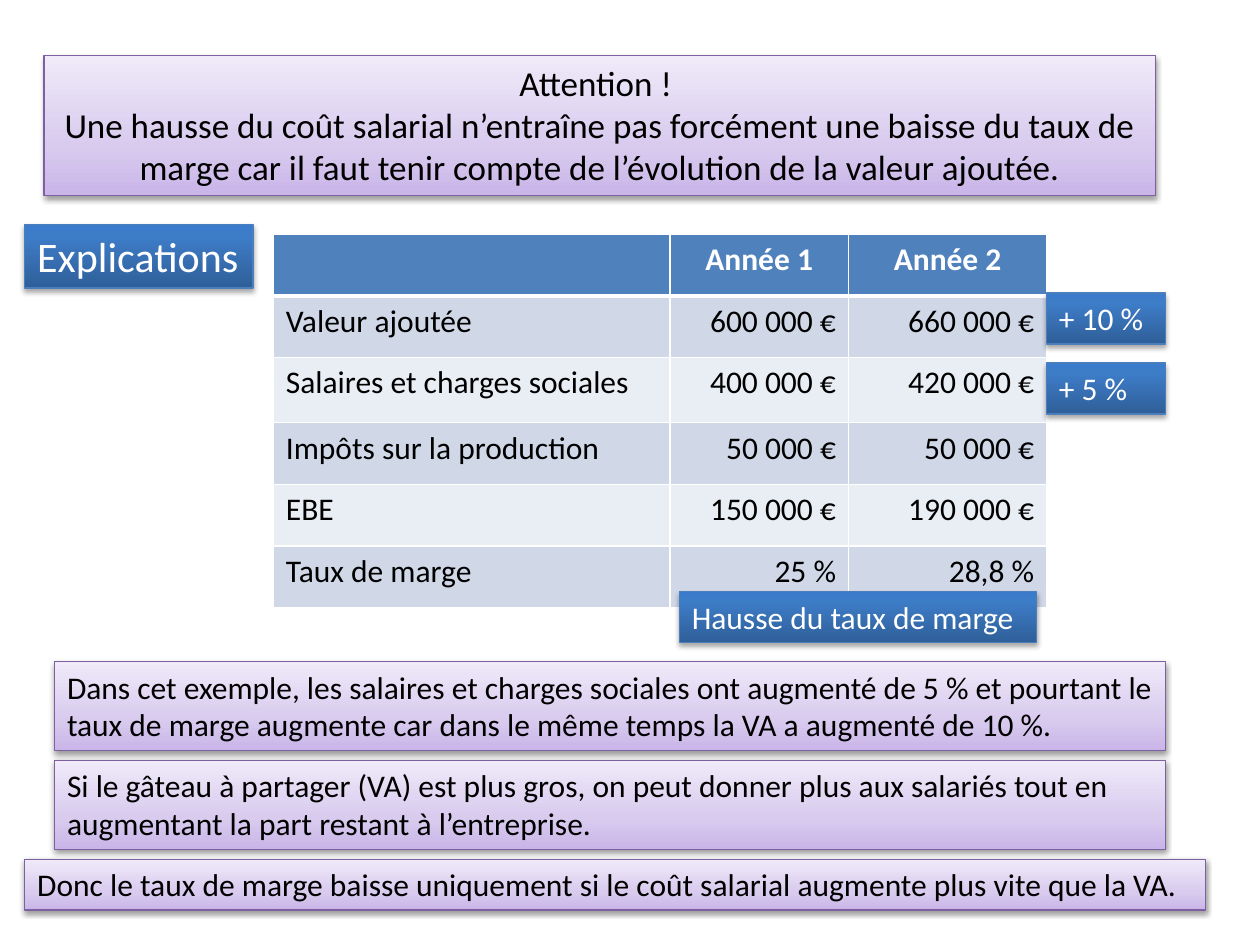
"""Build a slide on labour cost and profit margin, with a worked example."""
import copy

import pptx
import pptx.dml.color
import pptx.enum.text
import pptx.oxml
import pptx.oxml.ns
import pptx.util

Pt = pptx.util.Pt
ALIGN = pptx.enum.text.PP_ALIGN
FONT = "Calibri"

LILAC = {"stops": [(0, "C9B5E8"), (0.35, "D8CBEE"), (1, "F0EAF9")],
         "line": "7D60A0", "text": "000000", "shade": (38, 1.6)}
BLUE = {"stops": [(0, "2F5F99"), (0.8, "3D7CC7"), (1, "3A7CCB")],
        "line": "4B7EBC", "text": "FFFFFF", "shade": (35, 1.8)}

TITLE = ["Attention ! ",
         "Une hausse du coût salarial n’entraîne pas forcément une baisse du taux de "
         "marge car il faut tenir compte de l’évolution de la valeur ajoutée."]
CASE = ["Dans cet exemple, les salaires et charges sociales ont augmenté de 5 % et pourtant le "
        "taux de marge augmente car dans le même temps la VA a augmenté de 10 %."]
CAKE = ["Si le gâteau à partager (VA) est plus gros, on peut donner plus aux salariés tout en "
        "augmentant la part restant à l’entreprise."]
RULE = ["Donc le taux de marge baisse uniquement si le coût salarial augmente plus vite que la VA."]

BOXES = [
    (TITLE, LILAC, (25.2, 31.7, 635, 79.9), 20, ALIGN.CENTER),
    (["Explications"], BLUE, (14.2, 128.2, 130.5, 36.3), 24, ALIGN.LEFT),
    (CASE, LILAC, (31.2, 378, 635, 50.9), 18, ALIGN.LEFT),
    (RULE, LILAC, (14.2, 491, 674.6, 29.1), 18, ALIGN.LEFT),
    (["+ 10 %"], BLUE, (598, 167.5, 68, 29.1), 18, ALIGN.LEFT),
    (["+ 5 %"], BLUE, (598, 207.5, 68, 29.1), 18, ALIGN.LEFT),
    (["Hausse du taux de marge"], BLUE, (388.2, 338, 204, 29.1), 18, ALIGN.LEFT),
    (CAKE, LILAC, (31.2, 434.4, 635, 50.9), 18, ALIGN.LEFT),
]

ROWS = [
    ("", "Année 1", "Année 2"),
    ("Valeur ajoutée", "600 000 €", "660 000 €"),
    ("Salaires et charges sociales", "400 000 €", "420 000 €"),
    ("Impôts sur la production", "50 000 €", "50 000 €"),
    ("EBE", "150 000 €", "190 000 €"),
    ("Taux de marge", "25 %", "28,8 %"),
]
WIDTHS = [226.6, 102.2, 113.2]
HEIGHTS = [35.2, 35.2, 37.2, 35.2, 35.2, 35.2]
HEAD, BANDS = "4F81BD", ("E9EDF4", "D0D8E8")


def color(code):
    return pptx.dml.color.RGBColor.from_string(code)


def make(tag, body):
    space = pptx.oxml.ns.nsdecls("a")
    return pptx.oxml.parse_xml(f"<a:{tag} {space} {body}</a:{tag.split()[0]}>")


def write(par, text, size, code, align, bold=False):
    par.alignment = align
    run = par.add_run()
    run.text = text
    run.font.name, run.font.size, run.font.bold = FONT, Pt(size), bold
    run.font.color.rgb = color(code)


def paint(box, look):
    box.fill.gradient()
    box.fill.gradient_angle = 90
    stops = box._element.spPr.find(".//" + pptx.oxml.ns.qn("a:gsLst"))
    stops.append(copy.deepcopy(stops[0]))
    for stop, (place, code) in zip(box.fill.gradient_stops, look["stops"]):
        stop.position = place
        stop.color.rgb = color(code)
    box.line.color.rgb = color(look["line"])
    box.line.width = Pt(0.75)
    box.shadow.inherit = False
    alpha, dist = look["shade"]
    box._element.spPr.find(pptx.oxml.ns.qn("a:effectLst")).append(make(
        "outerShdw", f'blurRad="{Pt(3.1)}" dist="{Pt(dist)}" dir="5400000" rotWithShape="0">'
        f'<a:srgbClr val="000000"><a:alpha val="{alpha * 1000}"/></a:srgbClr>'))


def add_box(slide, lines, look, place, size, align):
    box = slide.shapes.add_textbox(*map(Pt, place))
    paint(box, look)
    frame = box.text_frame
    frame.word_wrap = True
    for i, line in enumerate(lines):
        par = frame.add_paragraph() if i else frame.paragraphs[0]
        write(par, line, size, look["text"], align)


def edge(cell, row):
    wide = {"L": 1, "R": 1, "T": 3 if row == 1 else 1, "B": 1 if row else 3}
    for side, width in wide.items():
        cell._tc.get_or_add_tcPr().append(make(
            "ln" + side, f'w="{Pt(width)}"><a:solidFill><a:srgbClr val="FFFFFF"/></a:solidFill>'))


def add_grid(slide):
    grid = slide.shapes.add_table(len(ROWS), len(WIDTHS), Pt(156.2), Pt(134),
                                  Pt(sum(WIDTHS)), Pt(sum(HEIGHTS))).table
    for col, width in zip(grid.columns, WIDTHS):
        col.width = Pt(width)
    for r, texts in enumerate(ROWS):
        grid.rows[r].height = Pt(HEIGHTS[r])
        for c, text in enumerate(texts):
            cell = grid.cell(r, c)
            edge(cell, r)
            cell.fill.solid()
            cell.fill.fore_color.rgb = color(BANDS[r % 2] if r else HEAD)
            if text:
                align = (ALIGN.RIGHT if c else ALIGN.LEFT) if r else ALIGN.CENTER
                write(cell.text_frame.paragraphs[0], text, 18,
                      "000000" if r else "FFFFFF", align, r == 0)


def main():
    deck = pptx.Presentation()
    deck.slide_width, deck.slide_height = Pt(720), Pt(540)
    slide = deck.slides.add_slide(deck.slide_layouts[6])
    add_grid(slide)
    for box in BOXES:
        add_box(slide, *box)
    deck.save("out.pptx")


if __name__ == "__main__":
    main()
